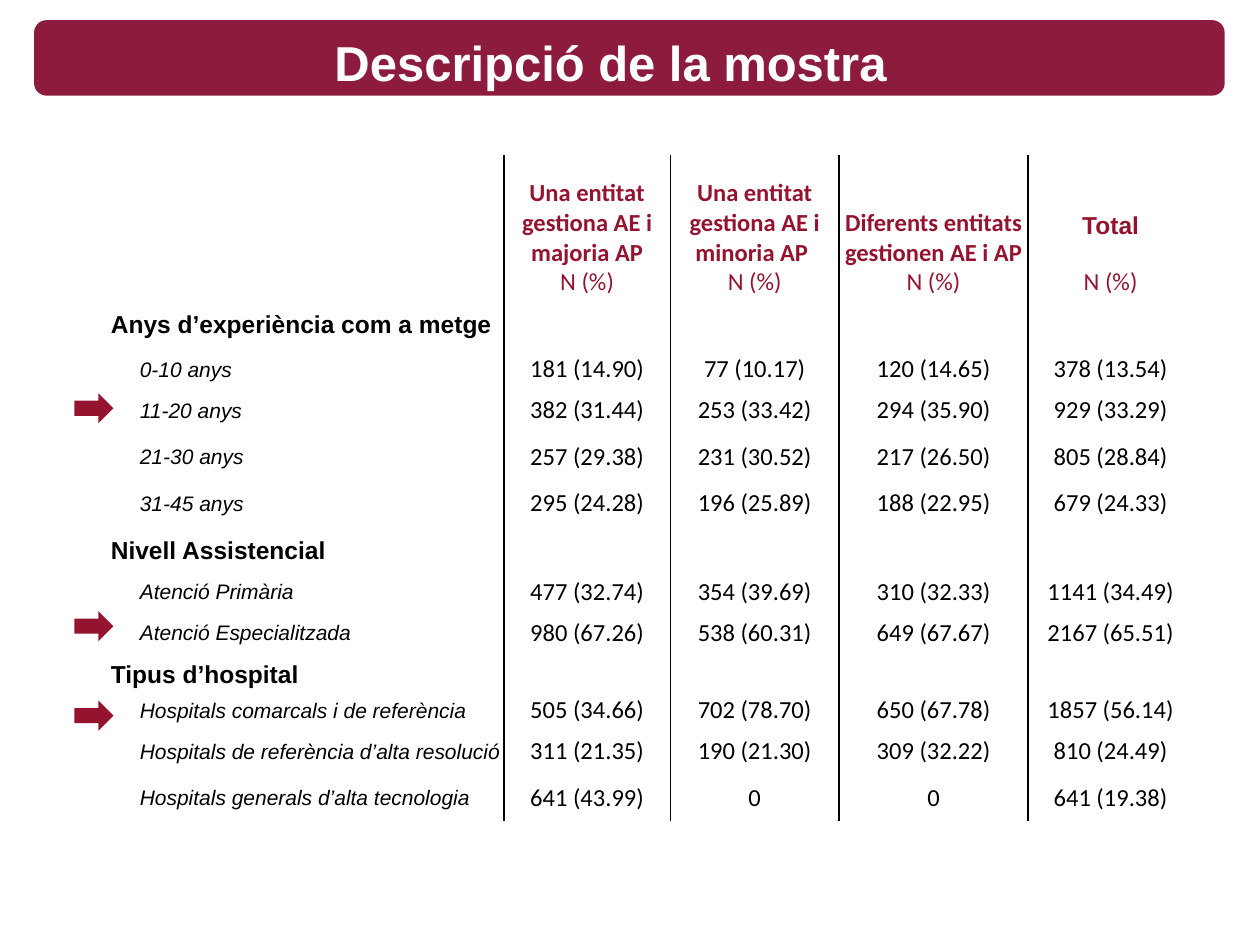
from pptx import Presentation
from pptx.dml.color import RGBColor
from pptx.enum.shapes import MSO_SHAPE
from pptx.enum.text import MSO_ANCHOR, PP_ALIGN
from pptx.oxml.ns import qn
from pptx.util import Inches, Pt
from lxml import etree

ROUNDED, ARROW = MSO_SHAPE.ROUNDED_RECTANGLE, MSO_SHAPE.RIGHT_ARROW
MIDDLE, BOTTOM = MSO_ANCHOR.MIDDLE, MSO_ANCHOR.BOTTOM
LEFT, CENTER = PP_ALIGN.LEFT, PP_ALIGN.CENTER

THEME = {
    "banner": RGBColor.from_string("8D1B3D"),
    "accent": RGBColor.from_string("94142F"),
    "ink": RGBColor.from_string("000000"),
    "paper": RGBColor.from_string("FFFFFF"),
    "title_size": Pt(28),
    "body_size": Pt(14),
    "detail_size": Pt(12),
    "sans": "Arial",
    "numbers": "Calibri",
    "plain_style": "{2D5ABB26-0587-4C30-8999-92F81FD0307C}",
}

TITLE = {"name": THEME["sans"], "size": THEME["title_size"], "bold": True, "color": THEME["paper"]}
HEADER = {"name": THEME["numbers"], "size": THEME["body_size"], "bold": True, "color": THEME["accent"]}
UNIT = HEADER | {"bold": False}
TOTAL = HEADER | {"name": THEME["sans"]}
SECTION = TOTAL | {"color": THEME["ink"]}
DETAIL = SECTION | {"size": THEME["detail_size"], "bold": False, "italic": True}
FIGURE = UNIT | {"color": THEME["ink"]}

deck = Presentation()
deck.slide_width, deck.slide_height = Inches(10), Inches(7.5)
page = deck.slides.add_slide(deck.slide_layouts[6])
column, row = deck.slide_width / 100, deck.slide_height / 75


def place(left, top, width, height):
    return [round(left * column), round(top * row), round(width * column), round(height * row)]


def write(para, text, style, align):
    para.alignment = align
    span = para.add_run()
    span.text = text
    for key, value in style.items():
        if key == "color":
            span.font.color.rgb = value
        else:
            setattr(span.font, key, value)


shapes = [(ROUNDED, (2.7, 1.6, 94.5, 6), THEME["banner"])]
shapes += [(ARROW, (5.9, top, 3.1, 2.4), THEME["accent"]) for top in (31.2, 48.5, 55.6)]
for kind, area, color in shapes:
    shape = page.shapes.add_shape(kind, *place(*area))
    shape.shadow.inherit = False
    shape.fill.solid()
    shape.fill.fore_color.rgb = color
    shape.line.fill.background()

title = page.shapes.add_textbox(*place(2.4, 2.4, 92.1, 5)).text_frame
title.word_wrap = True
title.vertical_anchor = MIDDLE
write(title.paragraphs[0], "Descripció de la mostra", TITLE, CENTER)

headers = [
    ("Una entitat gestiona AE i majoria AP", HEADER, 0),
    ("Una entitat gestiona AE i minoria AP ", HEADER, 0),
    ("Diferents entitats gestionen AE i AP", HEADER, 0),
    ("Total", TOTAL, 16),
]
rows = [
    (4.3, "Anys d’experiència com a metge", []),
    (2.8, "0-10 anys", ["181 (14.90)", "77 (10.17)", "120 (14.65)", "378 (13.54)"]),
    (3.7, "11-20 anys", ["382 (31.44)", "253 (33.42)", "294 (35.90)", "929 (33.29)"]),
    (3.7, "21-30 anys", ["257 (29.38)", "231 (30.52)", "217 (26.50)", "805 (28.84)"]),
    (3.7, "31-45 anys", ["295 (24.28)", "196 (25.89)", "188 (22.95)", "679 (24.33)"]),
    (3.8, "Nivell Assistencial", []),
    (2.8, "Atenció Primària", ["477 (32.74)", "354 (39.69)", "310 (32.33)", "1141 (34.49)"]),
    (3.7, "Atenció Especialitzada", ["980 (67.26)", "538 (60.31)", "649 (67.67)", "2167 (65.51)"]),
    (2.9, "Tipus d’hospital", []),
    (2.8, "Hospitals comarcals i de referència", ["505 (34.66)", "702 (78.70)", "650 (67.78)", "1857 (56.14)"]),
    (3.7, "Hospitals de referència d’alta resolució", ["311 (21.35)", "190 (21.30)", "309 (32.22)", "810 (24.49)"]),
    (3.7, "Hospitals generals d’alta tecnologia", ["641 (43.99)", "0", "0", "641 (19.38)"]),
]
widths = [31.3, 13.2, 13.4, 15, 13.1]
heights = [11.3] + [height for height, label, figures in rows]

frame = page.shapes.add_table(len(heights), len(widths), *place(8.7, 12.3, sum(widths), sum(heights)))
table = frame.table
table.first_row = table.horz_banding = False
table._tbl.tblPr.find(qn("a:tableStyleId")).text = THEME["plain_style"]
for index, width in enumerate(widths):
    table.columns[index].width = round(width * column)
for index, height in enumerate(heights):
    table.rows[index].height = round(height * row)

for line in range(len(heights)):
    for index in range(len(widths)):
        cell = table.cell(line, index)
        cell.margin_left = cell.margin_right = cell.margin_top = Inches(0.01)
        cell.margin_bottom = 0
        cell.vertical_anchor = MIDDLE
        cell.fill.background()
        sides = ["a:lnL"] * (index > 0) + ["a:lnR"] * (index < len(widths) - 1)
        for position, side in enumerate(sides):
            border = etree.Element(qn(side), w=str(Pt(1)))
            fill = etree.SubElement(border, qn("a:solidFill"))
            etree.SubElement(fill, qn("a:srgbClr"), val=str(THEME["ink"]))
            cell._tc.tcPr.insert(position, border)
        if not cell.text:
            ending = etree.SubElement(cell.text_frame.paragraphs[0]._p, qn("a:endParaRPr"))
            ending.set("sz", str(round(THEME["body_size"].pt * 100)))

for index, (label, style, gap) in enumerate(headers, 1):
    cell = table.cell(0, index)
    cell.vertical_anchor = BOTTOM
    write(cell.text_frame.paragraphs[0], label, style, CENTER)
    para = cell.text_frame.add_paragraph()
    para.space_before = Pt(gap)
    write(para, "N (%)", UNIT, CENTER)

for line, (height, label, figures) in enumerate(rows, 1):
    cell = table.cell(line, 0)
    if figures:
        cell.margin_left = Inches(0.24)
    write(cell.text_frame.paragraphs[0], label, DETAIL if figures else SECTION, LEFT)
    for index, figure in enumerate(figures, 1):
        cell = table.cell(line, index)
        cell.margin_left = cell.margin_right = cell.margin_top = 0
        write(cell.text_frame.paragraphs[0], figure, FIGURE, CENTER)

deck.save("out.pptx")
